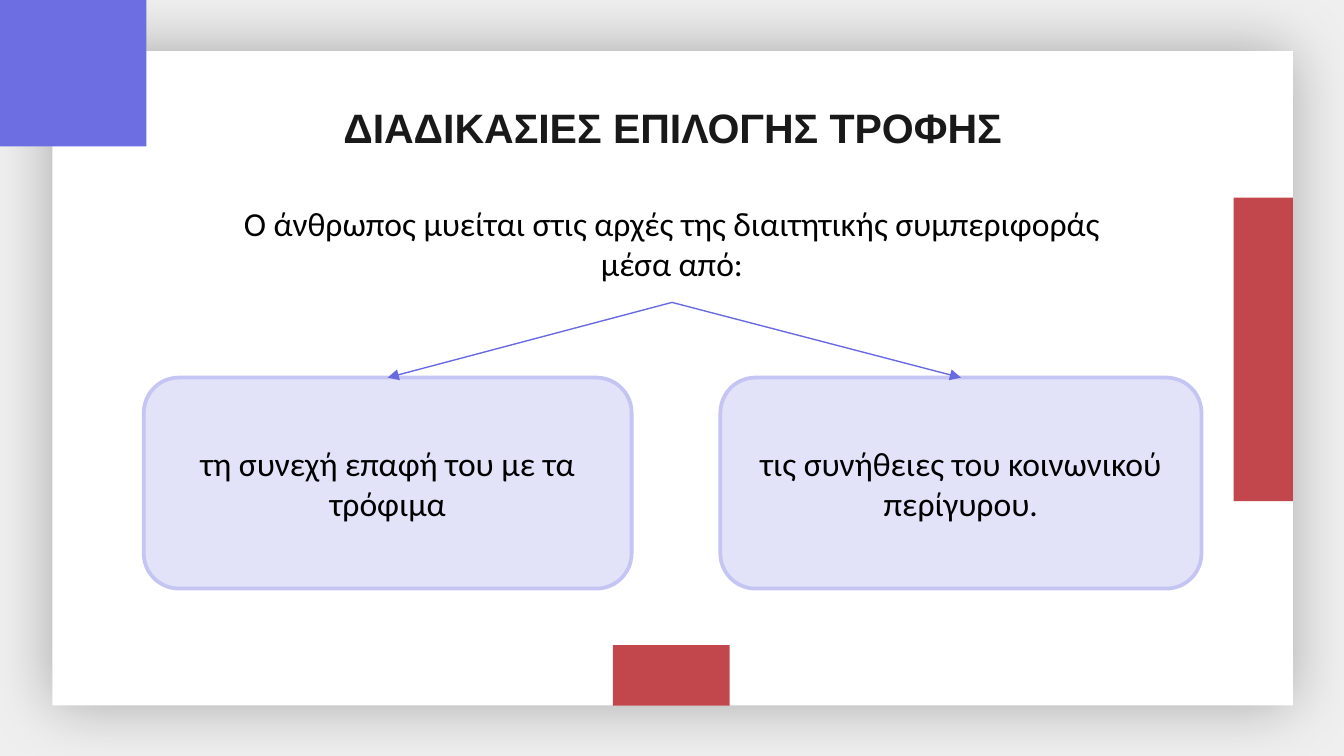
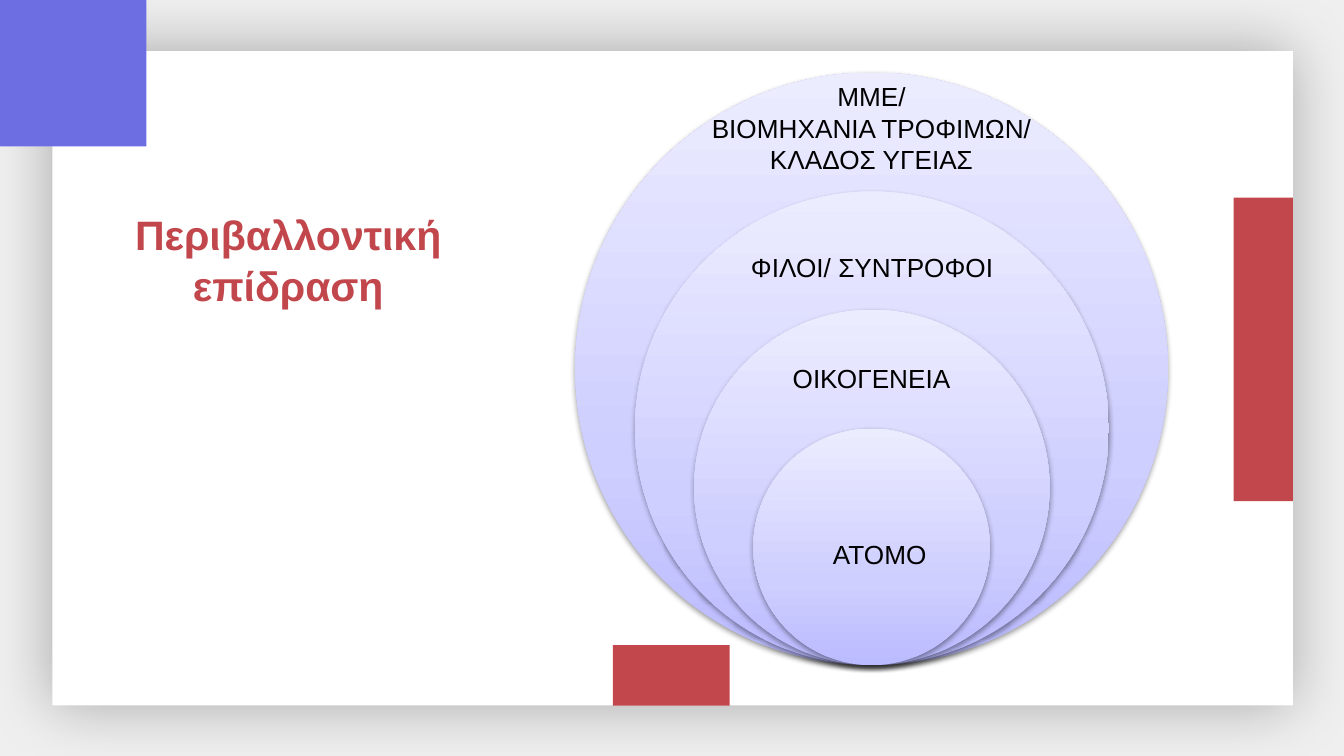
from dataclasses import dataclass

from lxml.etree import SubElement
from pptx import Presentation
from pptx.dml.color import RGBColor
from pptx.enum.shapes import MSO_CONNECTOR, MSO_SHAPE
from pptx.enum.text import MSO_ANCHOR, MSO_AUTO_SIZE, PP_ALIGN
from pptx.oxml import parse_xml
from pptx.oxml.ns import nsdecls, qn
from pptx.util import Pt

# Lengths are px, 200 to the inch
PX = 4572
WIDTH, HEIGHT = 2000, 1125

BLACK = RGBColor(0x00, 0x00, 0x00)
INK = RGBColor(0x19, 0x19, 0x19)
WHITE = RGBColor(0xFF, 0xFF, 0xFF)
BACKDROP = RGBColor(0xEF, 0xEF, 0xEF)
RED = RGBColor(0xC2, 0x47, 0x4C)
PURPLE = RGBColor(0x6E, 0x6E, 0xE3)
ARROW = RGBColor(0x69, 0x69, 0xE1)
PALE = RGBColor(0xE2, 0xE2, 0xF9)
PALE_EDGE = RGBColor(0xC5, 0xC5, 0xF4)
RING_STOPS = {
    0: RGBColor(0xBB, 0xBB, 0xFF),
    35: RGBColor(0xCE, 0xCE, 0xFF),
    100: RGBColor(0xEC, 0xEC, 0xFF),
}

TITLE = {"name": "Arial", "size": Pt(22), "bold": True}
BODY = {"name": "Calibri", "size": Pt(18), "bold": False}
LABEL = {"name": "Arial", "size": Pt(14), "bold": False}


@dataclass(frozen=True)
class Area:
    left: int
    top: int
    width: int
    height: int

    def emu(self) -> tuple[int, ...]:
        return tuple(n * PX for n in (self.left, self.top, self.width, self.height))


@dataclass(frozen=True)
class Shadow:
    alpha: int
    blur: float
    distance: float = 0
    angle: int = 0


@dataclass(frozen=True)
class Panel:
    area: Area
    colour: RGBColor
    shadow: Shadow | None = None


@dataclass(frozen=True)
class Caption:
    area: Area
    paras: tuple[str, ...]


# Frame shared by all slides
FRAME = (
    Panel(Area(78, 76, 1846, 974), WHITE, Shadow(30, 33.8)),
    Panel(Area(1836, 294, 88, 452), RED),
    Panel(Area(912, 960, 174, 90), RED),
    Panel(Area(0, 0, 218, 218), PURPLE),
)

# Choice boxes and the point their arrows leave from
CHOICES = (
    Caption(Area(214, 562, 726, 314), ("τη συνεχή επαφή του με τα τρόφιμα",)),
    Caption(Area(1072, 562, 716, 314), ("τις συνήθειες του κοινωνικού περίγυρου.",)),
)
ARROW_START = (1000, 450)

# Nested circles touching at the bottom
RING_CENTRE, RING_BOTTOM, RING_SIZE = 1297, 990, 882
RING_SHADOW = Shadow(38, 3.1, 1.6, 90)
RING_LABELS = (
    Caption(Area(1214, 792, 190, 68), ("ΑΤΟΜΟ",)),
    Caption(Area(1144, 530, 306, 68), ("ΟΙΚΟΓΕΝΕΙΑ",)),
    Caption(Area(1084, 364, 428, 68), ("ΦΙΛΟΙ/ ΣΥΝΤΡΟΦΟΙ",)),
    Caption(Area(972, 110, 650, 162), ("ΜΜΕ/", "ΒΙΟΜΗΧΑΝΙΑ ΤΡΟΦΙΜΩΝ/ ΚΛΑΔΟΣ ΥΓΕΙΑΣ")),
)


def write(box, paras: tuple[str, ...], style: dict, colour: RGBColor,
          anchor=MSO_ANCHOR.TOP, spacing: float = 1.0) -> None:
    """Fill a shape with centred paragraphs in one style."""
    frame = box.text_frame
    layout = {"word_wrap": True, "auto_size": MSO_AUTO_SIZE.NONE, "vertical_anchor": anchor}
    for name, value in layout.items():
        setattr(frame, name, value)
    para_format = {"alignment": PP_ALIGN.CENTER, "line_spacing": spacing,
                   "space_before": Pt(0), "space_after": Pt(0)}
    for number, text in enumerate(paras):
        para = frame.add_paragraph() if number else frame.paragraphs[0]
        for name, value in para_format.items():
            setattr(para, name, value)
        span = para.add_run()
        span.text = text
        for name, value in style.items():
            setattr(span.font, name, value)
        span.font.color.rgb = colour


def fill_placeholder(box, area: Area, text: str, style: dict, colour: RGBColor,
                     spacing: float = 1.0) -> None:
    """Move a placeholder and set its text, with even insets."""
    for name, value in zip(("left", "top", "width", "height"), area.emu()):
        setattr(box, name, value)
    for side in ("left", "top", "right", "bottom"):
        setattr(box.text_frame, f"margin_{side}", 20 * PX)
    write(box, (text,), style, colour, spacing=spacing)


def add_panel(page, kind, area: Area, colour: RGBColor):
    """Add a flat shape with no outline."""
    box = page.shapes.add_shape(kind, *area.emu())
    box.shadow.inherit = False
    box.fill.solid()
    box.fill.fore_color.rgb = colour
    box.line.fill.background()
    return box


def cast(box, shadow: Shadow) -> None:
    """Put an outer shadow into the shape's effect list."""
    effects = box.element.spPr.find(qn("a:effectLst"))
    outer = SubElement(effects, qn("a:outerShdw"), blurRad=str(Pt(shadow.blur)),
                       dist=str(Pt(shadow.distance)), dir=str(shadow.angle * 60000),
                       algn="ctr", rotWithShape="0")
    colour = SubElement(outer, qn("a:srgbClr"), val=str(BLACK))
    SubElement(colour, qn("a:alpha"), val=str(shadow.alpha * 1000))


def add_frame(deck, page) -> None:
    """Draw the frame and move it to the back of the slide master."""
    first = deck.slide_master.shapes[0].element
    for number, panel in enumerate(FRAME, start=101):
        box = add_panel(page, MSO_SHAPE.RECTANGLE, panel.area, panel.colour)
        if panel.shadow:
            cast(box, panel.shadow)
        box.element.nvSpPr.cNvPr.set("id", str(number))
        first.addprevious(box.element)


def add_arrow(page, start: tuple[int, int], end: tuple[int, int]) -> None:
    arrow = page.shapes.add_connector(
        MSO_CONNECTOR.STRAIGHT, *(n * PX for n in (*start, *end)))
    arrow.line.color.rgb = ARROW
    arrow.line.width = Pt(0.75)
    SubElement(arrow.line._get_or_add_ln(), qn("a:tailEnd"), type="triangle")
    SubElement(arrow.element.spPr, qn("a:effectLst"))


def add_choice(page, choice: Caption) -> None:
    box = add_panel(page, MSO_SHAPE.ROUNDED_RECTANGLE, choice.area, PALE)
    box.line.color.rgb = PALE_EDGE
    box.line.width = Pt(2)
    write(box, choice.paras, BODY, BLACK, MSO_ANCHOR.MIDDLE)


def add_ring(page, size: int) -> None:
    """Add a circle with a vertical three-stop gradient."""
    area = Area(RING_CENTRE - size // 2, RING_BOTTOM - size, size, size)
    ring = add_panel(page, MSO_SHAPE.OVAL, area, PALE)
    stops = "".join(f'<a:gs pos="{place * 1000}"><a:srgbClr val="{colour}"/></a:gs>'
                    for place, colour in RING_STOPS.items())
    gradient = parse_xml(f'<a:gradFill {nsdecls("a")} rotWithShape="1"><a:gsLst>{stops}</a:gsLst>'
                         '<a:lin ang="16200000" scaled="0"/></a:gradFill>')
    properties = ring.element.spPr
    properties.replace(properties.find(qn("a:solidFill")), gradient)
    cast(ring, RING_SHADOW)


def build_choices(page) -> None:
    fill_placeholder(page.shapes.title, Area(158, 130, 1686, 126),
                     "ΔΙΑΔΙΚΑΣΙΕΣ ΕΠΙΛΟΓΗΣ ΤΡΟΦΗΣ", TITLE, INK, 1.04)
    intro = page.placeholders[1]
    fill_placeholder(intro, Area(318, 282, 1364, 216),
                     "Ο άνθρωπος μυείται στις αρχές της διαιτητικής συμπεριφοράς μέσα από:",
                     BODY, BLACK)
    intro.fill.solid()
    intro.fill.fore_color.rgb = WHITE
    for choice in CHOICES:
        add_choice(page, choice)
    for choice in CHOICES:
        area = choice.area
        add_arrow(page, ARROW_START, (area.left + area.width // 2, area.top))


def build_rings(page) -> None:
    fill_placeholder(page.shapes.title, Area(124, 288, 610, 126),
                     "Περιβαλλοντική επίδραση", TITLE, RED, 1.04)
    for fifths in (5, 4, 3, 2):
        add_ring(page, RING_SIZE * fifths // 5)
    for label in RING_LABELS:
        write(page.shapes.add_textbox(*label.area.emu()), label.paras, LABEL, BLACK)


def main() -> None:
    deck = Presentation()
    deck.slide_width, deck.slide_height = WIDTH * PX, HEIGHT * PX
    backdrop = deck.slide_master.background.fill
    backdrop.solid()
    backdrop.fore_color.rgb = BACKDROP

    # Layouts: title with subtitle, then title only
    choices_page = deck.slides.add_slide(deck.slide_layouts[0])
    rings_page = deck.slides.add_slide(deck.slide_layouts[5])
    add_frame(deck, choices_page)
    build_choices(choices_page)
    build_rings(rings_page)
    deck.save("out.pptx")


if __name__ == "__main__":
    main()
